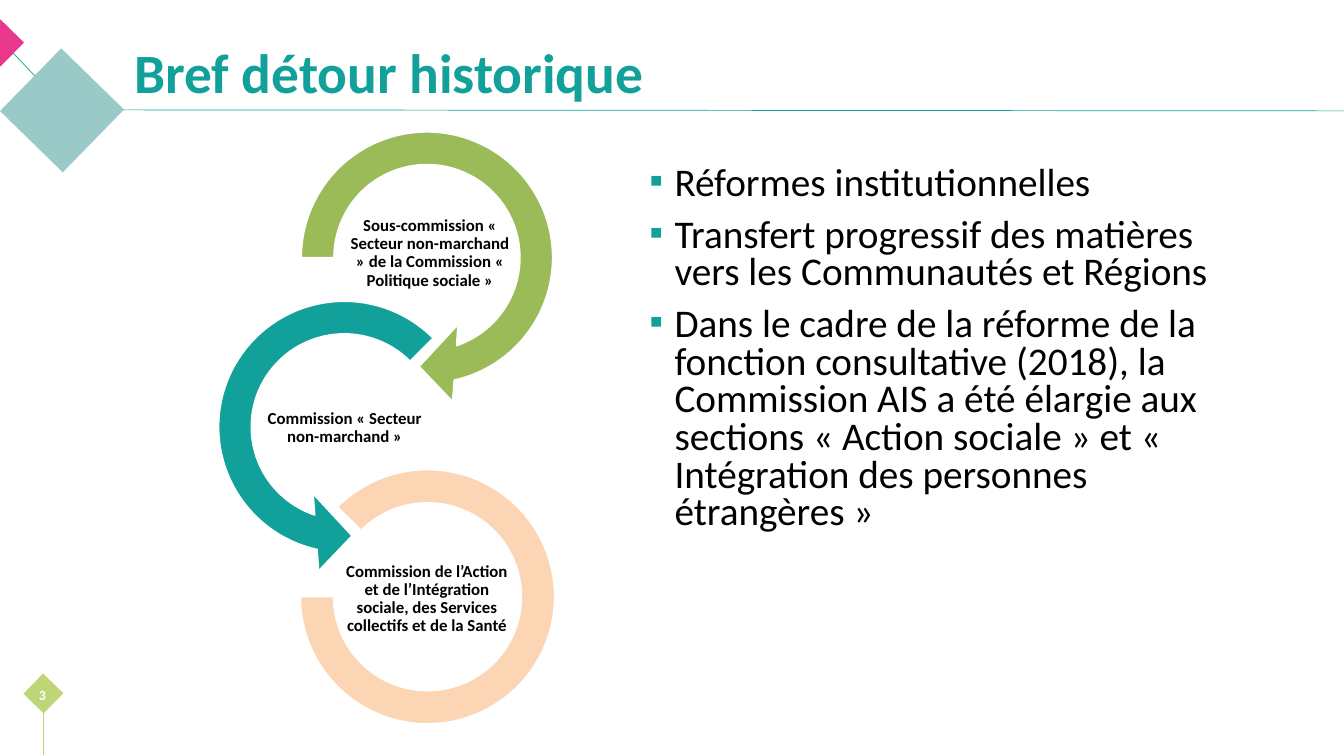
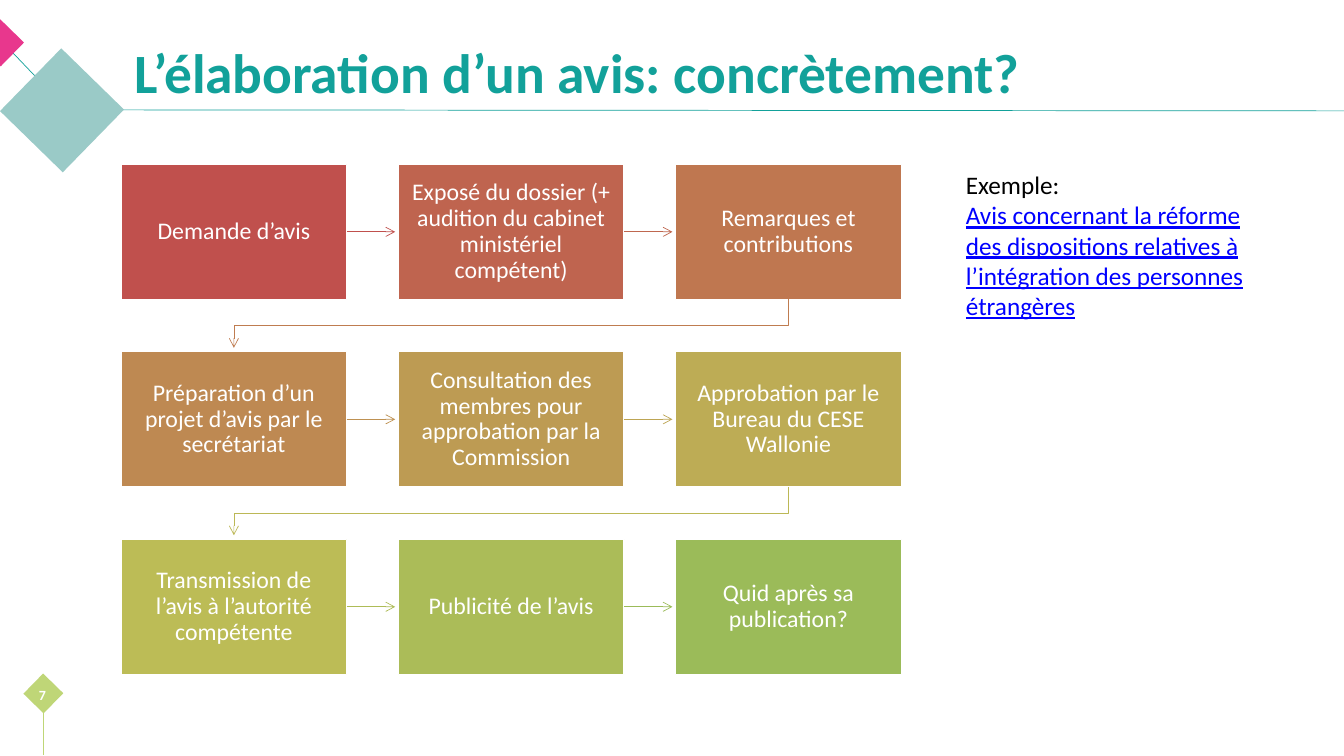
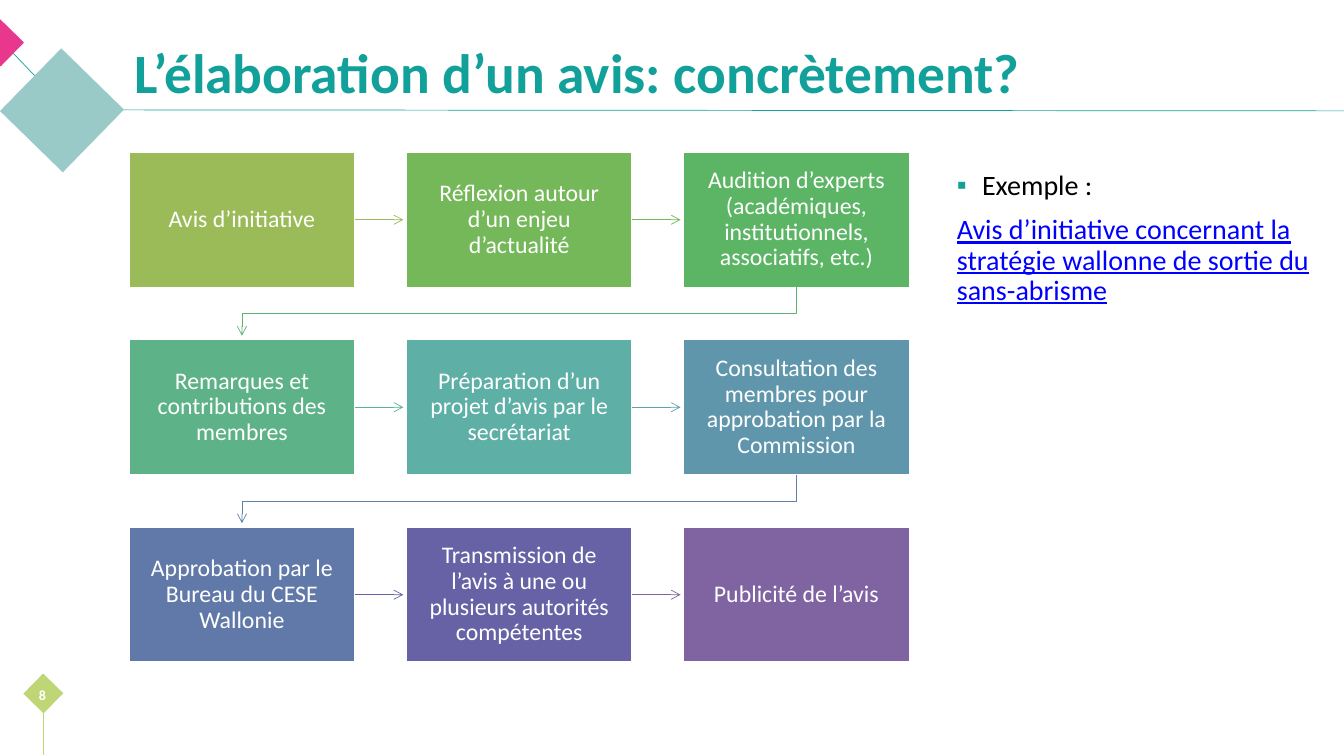
import dataclasses

import pptx
import pptx.dml.color
import pptx.enum.shapes
import pptx.enum.text
import pptx.oxml.ns
import pptx.util
from lxml import etree

PX = 9144
SHAPE = pptx.enum.shapes.MSO_SHAPE
ALIGN = pptx.enum.text.PP_ALIGN
ANCHOR = pptx.enum.text.MSO_ANCHOR
qn = pptx.oxml.ns.qn


@dataclasses.dataclass(frozen=True)
class Theme:
    font: str = "Calibri"
    teal: str = "12A19A"
    pale_teal: str = "9ACAC7"
    pink: str = "E8378D"
    lime: str = "BFD677"
    green: str = "9BBB59"
    peach: str = "FCD5B5"
    white: str = "FFFFFF"
    black: str = "000000"
    link: str = "0000FF"
    title_size: float = 39.6
    list_size: int = 28
    example_size: int = 20
    note_size: int = 18
    step_size: int = 17
    ring_size: int = 12
    number_size: int = 10


THEME = Theme()
SLIDE_SIZE = (1333, 750)
TITLE_FRAME = (123, 40, 1118, 69)
NUMBER_FRAME = (14, 669, 56, 40)

MASTER_LINES = [
    ((81, 124), (-1, 38), THEME.teal, 0.5),
    ((89, 109), (1333, 110), THEME.teal, 0.5),
    ((43, 749), (43, 706), THEME.lime, 0.75),
]
DIAMOND_ANGLE = 44.3
DIAMONDS = [
    ((18, 66, 87, 87), THEME.pale_teal),
    ((-16, 26, 33, 33), THEME.pink),
    ((29, 674, 28, 28), THEME.lime),
]

RINGS = [
    (SHAPE.CIRCULAR_ARROW, (277, 109, 293, 293), (0.11, 11.42, 45, 108, 0.13), THEME.green,
     (342, 203, 169, 97),
     "Sous-commission « Secteur non-marchand » de la Commission « Politique sociale »"),
    (SHAPE.LEFT_CIRCULAR_ARROW, (195, 277, 293, 293), (0.11, 11.42, 63, 189, 0.13), THEME.teal,
     (259, 375, 166, 100),
     "Commission « Secteur non-marchand »"),
    (SHAPE.BLOCK_ARC, (298, 466, 252, 252), (135, 108, 0.13), THEME.peach,
     (342, 554, 163, 81),
     "Commission de l’Action et de l’Intégration sociale, des Services collectifs et de la Santé"),
]

REQUEST_STEPS = [
    ("Demande d’avis", "C0504D", "C0504D"),
    ("Exposé du dossier (+ audition du cabinet ministériel compétent)", "BF644F", "BF674F"),
    ("Remarques et contributions", "BF7750", "BF7C50"),
    ("Préparation d’un projet d’avis par le secrétariat", "BE8952", "BE9152"),
    ("Consultation des membres pour approbation par la Commission", "BD9B53", "BDA554"),
    ("Approbation par le Bureau du CESE Wallonie", "BDAC55", "BCB856"),
    ("Transmission de l’avis à l’autorité compétente", "BCBC56", "AEBC57"),
    ("Publicité de l’avis", "ABBC58", "9BBB59"),
    ("Quid après sa publication?", "9BBB59", None),
]
INITIATIVE_STEPS = [
    ("Avis d’initiative", "9BBB59", "9BBB59"),
    ("Réflexion autour d’un enjeu d’actualité", "75B85A", "70B85A"),
    ("Audition d’experts (académiques, institutionnels, associatifs, etc.)", "5CB565", "5CB46F"),
    ("Remarques et contributions des membres", "5DB287", "5DB195"),
    ("Préparation d’un projet d’avis par le secrétariat", "5EAFA6", "5FA4AD"),
    ("Consultation des membres pour approbation par la Commission", "6096AC", "6181A9"),
    ("Approbation par le Bureau du CESE Wallonie", "6179A8", "6362A6"),
    ("Transmission de l’avis à une ou plusieurs autorités compétentes", "6762A5", "8064A2"),
    ("Publicité de l’avis", "8064A2", None),
]
COLUMNS = 3
STEP_SIZE = (224, 134)
STEP_PITCH = (275, 186)
ARROW_LENGTH = 48
ARROW_BEND = 26

PAGES = [
    {
        "title": "Bref détour historique", "number": "3",
        "frame": (634, 160, 597, 391), "size": THEME.list_size, "spacing": 0.8, "gap": 10,
        "body": [
            ("bullet", "Réformes institutionnelles"),
            ("bullet", "Transfert progressif des matières vers les Communautés et Régions"),
            ("bullet", "Dans le cadre de la réforme de la fonction consultative (2018), la "
                       "Commission AIS a été élargie aux sections « Action sociale » et "
                       "« Intégration des personnes étrangères »"),
        ],
        "rings": RINGS,
    },
    {
        "title": "L’élaboration d’un avis: concrètement?", "number": "7",
        "frame": (948, 163, 329, 162), "size": THEME.note_size, "spacing": 1.0, "gap": 0,
        "body": [
            ("plain", "Exemple:"),
            ("link", "Avis concernant la réforme des dispositions relatives à "
                     "l’intégration des personnes étrangères"),
        ],
        "steps": REQUEST_STEPS, "origin": (120, 163),
    },
    {
        "title": "L’élaboration d’un avis: concrètement?", "number": "8",
        "frame": (939, 165, 373, 261), "size": THEME.example_size, "spacing": 0.9, "gap": 10,
        "body": [
            ("bullet", "Exemple :"),
            ("link", "Avis d’initiative concernant la stratégie wallonne de sortie du "
                     "sans-abrisme"),
        ],
        "steps": INITIATIVE_STEPS, "origin": (128, 151),
    },
]


def emu(*lengths):
    return [length * PX for length in lengths]


def rgb(code):
    return pptx.dml.color.RGBColor.from_string(code)


def place(shape, frame):
    shape.left, shape.top, shape.width, shape.height = emu(*frame)


def style_para(para, size, color, bold=False, align=ALIGN.LEFT, spacing=1.0, before=0):
    para.alignment = align
    para.line_spacing = spacing
    para.space_before = pptx.util.Pt(before)
    font = para.font
    font.name = THEME.font
    font.size = pptx.util.Pt(size)
    font.bold = bold
    font.color.rgb = rgb(color)


def set_text(shape, text, size, color, inset=None, **style):
    frame = shape.text_frame
    frame.word_wrap = True
    frame.auto_size = pptx.enum.text.MSO_AUTO_SIZE.NONE
    frame.vertical_anchor = ANCHOR.MIDDLE
    if inset is not None:
        frame.margin_left = frame.margin_top = inset * PX
        frame.margin_right = frame.margin_bottom = inset * PX
    frame.text = text
    style_para(frame.paragraphs[0], size, color, **style)


def add_block(page, kind, frame, fill, border=None):
    shape = page.shapes.add_shape(kind, *emu(*frame))
    shape.shadow.inherit = False
    shape.fill.solid()
    shape.fill.fore_color.rgb = rgb(fill)
    if border:
        shape.line.color.rgb = rgb(border)
        shape.line.width = pptx.util.Pt(1)
    else:
        shape.line.fill.background()
    return shape


def style_line(shape, color, width, arrow=False):
    shape.line.color.rgb = rgb(color)
    shape.line.width = pptx.util.Pt(width)
    if arrow:
        outline = shape.element.spPr.find(qn("a:ln"))
        etree.SubElement(outline, qn("a:tailEnd"), type="arrow")


def add_line(page, start, end, color, width, arrow=False):
    kind = pptx.enum.shapes.MSO_CONNECTOR.STRAIGHT
    line = page.shapes.add_connector(kind, *emu(*start, *end))
    style_line(line, color, width, arrow)
    etree.SubElement(line.element.spPr, qn("a:effectLst"))


def add_bent_arrow(page, points, color):
    start, *others = [tuple(emu(*point)) for point in points]
    builder = page.shapes.build_freeform(*start)
    builder.add_line_segments(others, close=False)
    shape = builder.convert_to_shape()
    shape.shadow.inherit = False
    shape.fill.background()
    style_line(shape, color, 0.5, arrow=True)


def set_bullet(para, shown):
    properties = para._p.get_or_add_pPr()
    indent = 25 * PX if shown else 0
    properties.set("marL", str(indent))
    properties.set("indent", str(-indent))
    if shown:
        color = etree.SubElement(properties, qn("a:buClr"))
        etree.SubElement(color, qn("a:srgbClr"), val=THEME.teal)
        etree.SubElement(properties, qn("a:buChar"), char="▪")
    else:
        etree.SubElement(properties, qn("a:buNone"))


def fill_body(body, content):
    place(body, content["frame"])
    frame = body.text_frame
    frame.auto_size = pptx.enum.text.MSO_AUTO_SIZE.NONE
    frame.vertical_anchor = ANCHOR.TOP
    frame.text = "\n".join(text for _, text in content["body"])
    for index, (para, (kind, _)) in enumerate(zip(frame.paragraphs, content["body"])):
        set_bullet(para, kind == "bullet")
        style_para(para, content["size"], THEME.link if kind == "link" else THEME.black,
                   spacing=content["spacing"], before=content["gap"] if index else 0)
        para.font.underline = kind == "link"


def draw_frame(page, content):
    for line in MASTER_LINES:
        add_line(page, *line)
    for frame, fill in DIAMONDS:
        add_block(page, SHAPE.RECTANGLE, frame, fill).rotation = DIAMOND_ANGLE
    set_text(page.shapes.title, content["title"], THEME.title_size, THEME.teal,
             bold=True, spacing=0.9)
    number = page.shapes.add_textbox(*emu(*NUMBER_FRAME))
    set_text(number, content["number"], THEME.number_size, THEME.white,
             bold=True, align=ALIGN.CENTER)


def draw_rings(page, rings):
    for kind, frame, adjustments, fill, label_frame, text in rings:
        ring = add_block(page, kind, frame, fill, THEME.white)
        for index, value in enumerate(adjustments):
            ring.adjustments[index] = value
        label = page.shapes.add_textbox(*emu(*label_frame))
        set_text(label, text, THEME.ring_size, THEME.black, inset=1,
                 bold=True, align=ALIGN.CENTER, spacing=0.9)


def draw_steps(page, steps, origin):
    width, height = STEP_SIZE
    first_center = origin[0] + width // 2
    for index, (text, fill, arrow_color) in enumerate(steps):
        row, column = divmod(index, COLUMNS)
        left = origin[0] + column * STEP_PITCH[0]
        top = origin[1] + row * STEP_PITCH[1]
        step = add_block(page, SHAPE.RECTANGLE, (left, top, width, height), fill, THEME.white)
        set_text(step, text, THEME.step_size, THEME.white, inset=13,
                 align=ALIGN.CENTER, spacing=0.9)
        right, bottom = left + width, top + height
        if arrow_color and column < COLUMNS - 1:
            middle = top + height // 2
            add_line(page, (right, middle), (right + ARROW_LENGTH, middle),
                     arrow_color, 0.5, arrow=True)
        elif arrow_color:
            center, bend = left + width // 2, bottom + ARROW_BEND
            add_bent_arrow(page, [(center, bottom), (center, bend), (first_center, bend),
                                  (first_center, bottom + ARROW_LENGTH)], arrow_color)


def main():
    deck = pptx.Presentation()
    deck.slide_width, deck.slide_height = emu(*SLIDE_SIZE)
    layout = deck.slide_layouts[1]
    place(layout.placeholders[0], TITLE_FRAME)
    for content in PAGES:
        page = deck.slides.add_slide(layout)
        draw_frame(page, content)
        fill_body(page.placeholders[1], content)
        if "rings" in content:
            draw_rings(page, content["rings"])
        else:
            draw_steps(page, content["steps"], content["origin"])
    deck.save("out.pptx")


if __name__ == "__main__":
    main()
